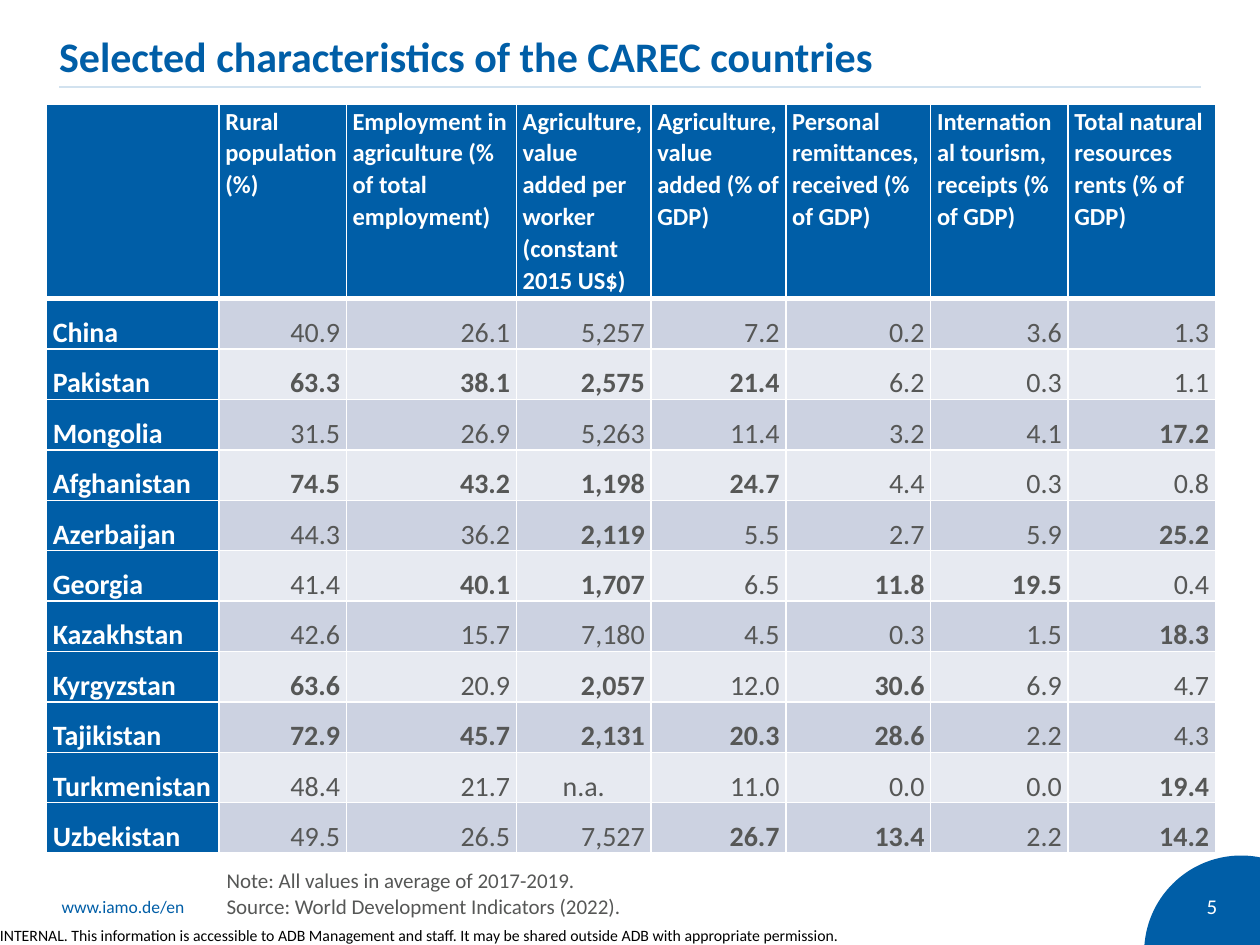
from dataclasses import dataclass
from lxml.etree import SubElement
from pptx import Presentation
from pptx.dml.color import RGBColor
from pptx.enum.shapes import MSO_CONNECTOR, MSO_SHAPE
from pptx.enum.text import MSO_ANCHOR, PP_ALIGN
from pptx.oxml.ns import qn
from pptx.util import Pt


@dataclass(frozen=True)
class Theme:
    font: str = "Calibri"
    blue: str = "005EA7"
    white: str = "FFFFFF"
    grey: str = "565756"
    black: str = "000000"
    bands: tuple = ("CCD2E1", "E7EAF1")
    title: int = 24
    body: int = 16
    header: int = 14
    note: int = 12
    address: int = 10
    disclaimer: int = 9


THEME = Theme()

# Content
TITLE = "Selected characteristics of the CAREC countries"
NOTES = ["Note: All values in average of 2017-2019.",
         "Source: World Development Indicators (2022)."]
ADDRESS = "www.iamo.de/en"
PAGE = "5"
DISCLAIMER = ("INTERNAL. This information is accessible to ADB Management and staff. "
              "It may be shared outside ADB with appropriate permission.")

# Heading, column width, number format, test for a bold value
COLUMNS = [
    ("", 98.6, "", None),
    ("Rural population (%)", 72.7, ".1f", lambda value: value > 60),
    ("Employment in agriculture (% of total employment)", 97.2, ".1f", lambda value: value > 38),
    ("Agriculture, value added per worker (constant 2015 US$)", 77, ",d",
     lambda value: value < 2600),
    ("Agriculture, value added (% of GDP)", 77, ".1f", lambda value: value > 20),
    ("Personal remittances, received (% of GDP)", 82.8, ".1f", lambda value: value > 10),
    ("International tourism, receipts (% of GDP)", 78.5, ".1f", lambda value: value > 10),
    ("Total natural resources rents (% of GDP)", 84.2, ".1f", lambda value: value > 10),
]
COUNTRIES = [
    ("China", 40.9, 26.1, 5257, 7.2, 0.2, 3.6, 1.3),
    ("Pakistan", 63.3, 38.1, 2575, 21.4, 6.2, 0.3, 1.1),
    ("Mongolia", 31.5, 26.9, 5263, 11.4, 3.2, 4.1, 17.2),
    ("Afghanistan", 74.5, 43.2, 1198, 24.7, 4.4, 0.3, 0.8),
    ("Azerbaijan", 44.3, 36.2, 2119, 5.5, 2.7, 5.9, 25.2),
    ("Georgia", 41.4, 40.1, 1707, 6.5, 11.8, 19.5, 0.4),
    ("Kazakhstan", 42.6, 15.7, 7180, 4.5, 0.3, 1.5, 18.3),
    ("Kyrgyzstan", 63.6, 20.9, 2057, 12.0, 30.6, 6.9, 4.7),
    ("Tajikistan", 72.9, 45.7, 2131, 20.3, 28.6, 2.2, 4.3),
    ("Turkmenistan", 48.4, 21.7, None, 11.0, 0.0, 0.0, 19.4),
    ("Uzbekistan", 49.5, 26.5, 7527, 26.7, 13.4, 2.2, 14.2),
]
TABLE_LEFT, TABLE_TOP = 26.6, 59.8
HEADER_HEIGHT, ROW_HEIGHT = 110.9, 28.8


def color(value):
    return RGBColor.from_string(value)


def style(paragraph, size, ink, bold=False, align=PP_ALIGN.LEFT, spacing=None):
    paragraph.alignment = align
    if spacing:
        paragraph.line_spacing = spacing
    font = paragraph.font
    font.name, font.size, font.bold = THEME.font, Pt(size), bold
    font.color.rgb = color(ink)


def add_text(slide, box, lines, size, ink, inset=True, wrap=True,
             anchor=MSO_ANCHOR.TOP, **options):
    frame = slide.shapes.add_textbox(*map(Pt, box)).text_frame
    frame.word_wrap, frame.vertical_anchor = wrap, anchor
    if not inset:
        frame.margin_left = frame.margin_right = frame.margin_top = frame.margin_bottom = 0
    frame.text = "\n".join(lines)
    for paragraph in frame.paragraphs:
        style(paragraph, size, ink, **options)


def set_borders(cell, bottom):
    properties = cell._tc.get_or_add_tcPr()
    for side, width in (("L", 1), ("R", 1), ("T", 1), ("B", bottom)):
        line = SubElement(properties, qn(f"a:ln{side}"), w=str(Pt(width)))
        fill = SubElement(line, qn("a:solidFill"))
        SubElement(fill, qn("a:srgbClr"), val=THEME.white)


def fill_cell(cell, text, fill, size, ink, anchor, bottom=1, **options):
    set_borders(cell, bottom)
    cell.fill.solid()
    cell.fill.fore_color.rgb = color(fill)
    cell.margin_left = cell.margin_right = Pt(3.6)
    cell.margin_top = cell.margin_bottom = 0
    cell.vertical_anchor = anchor
    cell.text = text
    paragraph = cell.text_frame.paragraphs[0]
    paragraph.space_before = Pt(0 if not text else 2)
    paragraph.space_after = Pt(2)
    style(paragraph, size, ink, **options)


def add_country_table(slide):
    widths = [column[1] for column in COLUMNS]
    height = HEADER_HEIGHT + ROW_HEIGHT * len(COUNTRIES)
    table = slide.shapes.add_table(len(COUNTRIES) + 1, len(COLUMNS), Pt(TABLE_LEFT),
                                   Pt(TABLE_TOP), Pt(sum(widths)), Pt(height)).table
    table.horz_banding = False
    for column, width in zip(table.columns, widths):
        column.width = Pt(width)
    for index, row in enumerate(table.rows):
        row.height = Pt(ROW_HEIGHT if index else HEADER_HEIGHT)

    for index, (heading, *_) in enumerate(COLUMNS):
        fill_cell(table.cell(0, index), heading, THEME.blue, THEME.header, THEME.white,
                  MSO_ANCHOR.TOP, bottom=3, bold=True, spacing=1.07)

    for row, (country, *values) in enumerate(COUNTRIES, 1):
        fill_cell(table.cell(row, 0), country, THEME.blue, THEME.body, THEME.white,
                  MSO_ANCHOR.BOTTOM, bold=True, spacing=1.5)
        for index, value in enumerate(values, 1):
            _, _, number_format, stands_out = COLUMNS[index]
            missing = value is None
            fill_cell(table.cell(row, index),
                      "n.a." if missing else format(value, number_format),
                      THEME.bands[(row - 1) % 2], THEME.body, THEME.grey, MSO_ANCHOR.BOTTOM,
                      bold=not missing and stands_out(value), spacing=1.5,
                      align=PP_ALIGN.CENTER if missing else PP_ALIGN.RIGHT)


def add_decoration(slide):
    # Corner disc behind the page number
    disc = slide.shapes.add_shape(MSO_SHAPE.OVAL, Pt(653.8), Pt(488.9), Pt(110.9), Pt(110.9))
    disc.shadow.inherit = False
    disc.fill.solid()
    disc.fill.fore_color.rgb = color(THEME.blue)
    disc.line.fill.background()

    # Half-transparent rule under the title
    rule = slide.shapes.add_connector(MSO_CONNECTOR.STRAIGHT, Pt(33.8), Pt(49.7),
                                      Pt(686.2), Pt(49.7))
    rule.line.width = Pt(0.5)
    rule.line.color.rgb = color(THEME.blue)
    properties = rule._element.spPr
    SubElement(properties.find(".//" + qn("a:srgbClr")), qn("a:alpha"), val="50000")
    SubElement(properties, qn("a:effectLst"))


def main():
    presentation = Presentation()
    presentation.slide_width, presentation.slide_height = Pt(720), Pt(540)
    slide = presentation.slides.add_slide(presentation.slide_layouts[6])

    add_decoration(slide)
    # Footer and title
    add_text(slide, (0, 529.2, 482.4, 10.8), [DISCLAIMER], THEME.disclaimer, THEME.black,
             inset=False, wrap=False)
    add_text(slide, (28.1, 508.3, 164.2, 19.4), [ADDRESS], THEME.address, THEME.blue)
    add_text(slide, (33.8, 20.9, 630.7, 49.7), [TITLE], THEME.title, THEME.blue,
             inset=False, bold=True, spacing=0.9)
    add_text(slide, (652.3, 503.3, 50.4, 28.8), [PAGE], THEME.note, THEME.white,
             anchor=MSO_ANCHOR.MIDDLE, align=PP_ALIGN.RIGHT)
    add_text(slide, (122.4, 492.5, 520, 36), NOTES, THEME.note, THEME.grey)
    add_country_table(slide)

    presentation.save("out.pptx")


if __name__ == "__main__":
    main()
